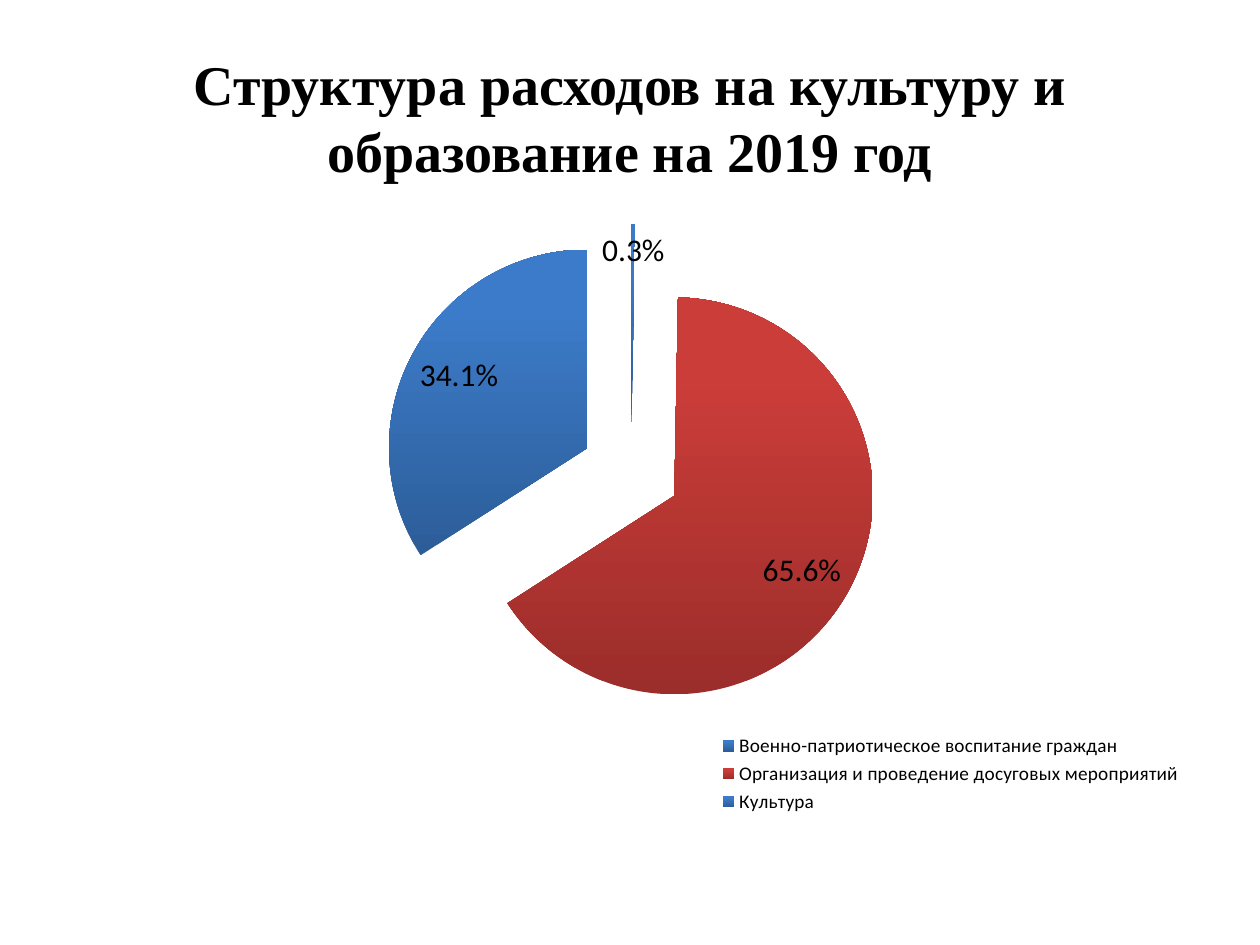
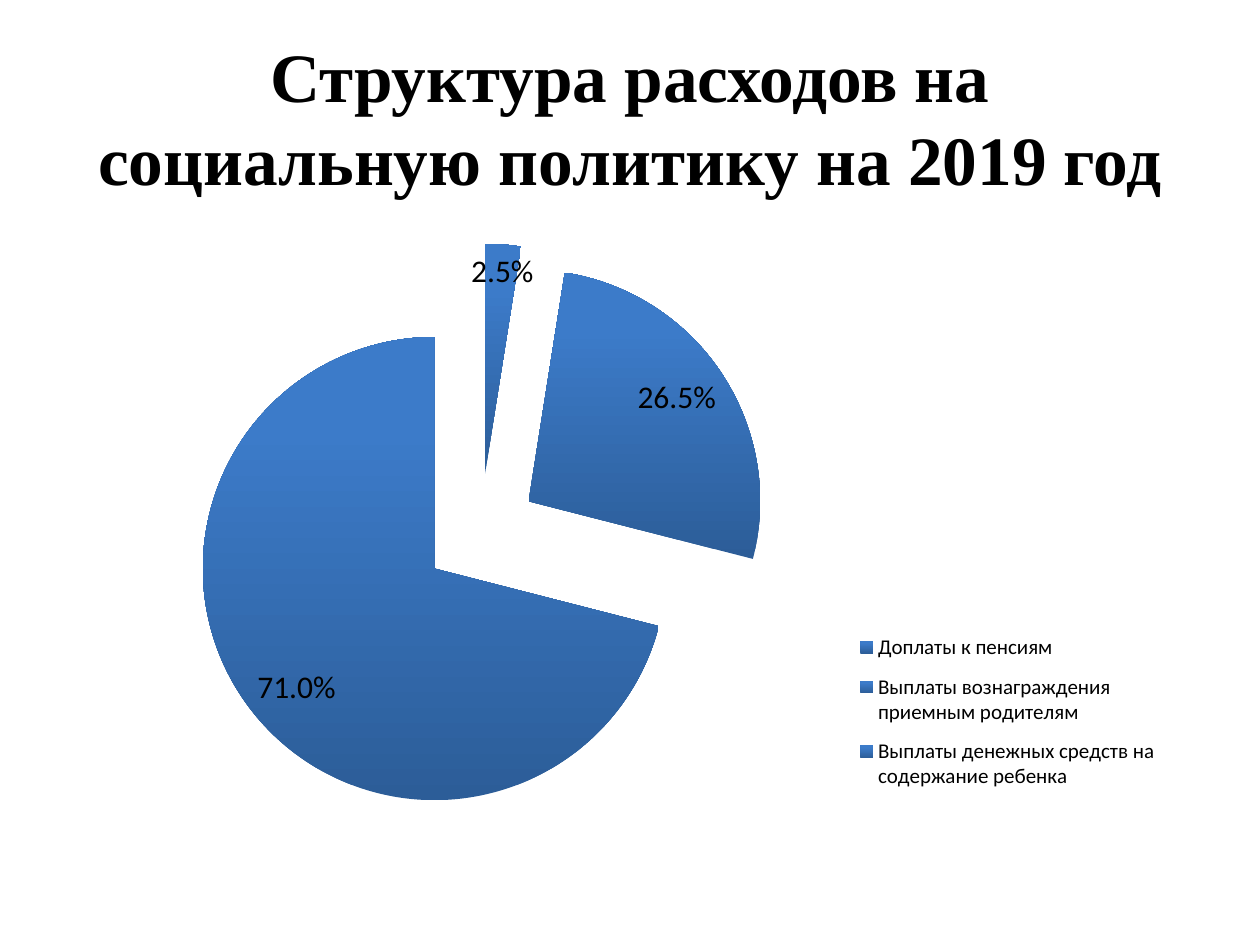
from lxml import etree
from pptx import Presentation
from pptx import util as u
from pptx.chart.data import CategoryChartData
from pptx.dml.color import RGBColor
from pptx.enum import chart as charts, text
from pptx.oxml import ns

# Content: title, its size, slices (label, percent, fill), legend and plot areas
BLUE = (RGBColor(0x2C, 0x5D, 0x98), RGBColor(0x3C, 0x7B, 0xC9))
RED = (RGBColor(0x9B, 0x2D, 0x2A), RGBColor(0xCB, 0x3D, 0x39))
BLACK = RGBColor(0, 0, 0)

PAGES = [
    dict(
        title="Структура расходов на культуру и образование на 2019 год",
        title_size=32,
        slices=[
            ("Военно-патриотическое воспитание граждан", 0.3, BLUE),
            ("Организация и проведение досуговых мероприятий", 65.6, RED),
            ("Культура", 34.1, BLUE),
        ],
        plot=(2, 4, 1132, 496),
        legend=(652, 510, 472, 88),
        legend_size=11,
    ),
    dict(
        title="Структура расходов на социальную политику на 2019 год",
        title_size=39.6,
        slices=[
            ("Доплаты к пенсиям", 2.5, BLUE),
            ("Выплаты вознаграждения приемным родителям", 26.5, BLUE),
            ("Выплаты денежных средств на содержание ребенка", 71, BLUE),
        ],
        plot=(20, 24, 794, 579),
        legend=(787, 400, 315, 184),
        legend_size=12,
    ),
]

# Shared layout, in px
PX_PER_INCH = 126
PAGE_SIZE = (1260, 945)
TITLE_BOX = (63, 38, 1134, 157)
CHART_BOX = (63, 220, 1134, 624)
EXPLOSION = 25


def px(length):
    return u.Emu(round(length * u.Inches(1) / PX_PER_INCH))


def apply(target, **values):
    for name, value in values.items():
        setattr(target, name, value)


def chart_element(parent, tag, value):
    return etree.SubElement(parent, ns.qn(f"c:{tag}"), val=str(value))


def manual_layout(box, inner=False):
    """Layout element for a box given in px from the chart's corner."""
    layout = etree.Element(ns.qn("c:layout"))
    manual = etree.SubElement(layout, ns.qn("c:manualLayout"))
    if inner:
        chart_element(manual, "layoutTarget", "inner")
    for tag in ("xMode", "yMode"):
        chart_element(manual, tag, "edge")
    for tag, length, full in zip("xywh", box, CHART_BOX[2:] * 2):
        chart_element(manual, tag, round(length / full, 3))
    return layout


def replace_layout(parent, layout, after=None):
    for old in parent.findall(ns.qn("c:layout")):
        parent.remove(old)
    if after is None:
        parent.insert(0, layout)
    else:
        parent.find(ns.qn(after)).addnext(layout)


def add_title(page, words, size):
    title = page.shapes.title
    apply(title, **dict(zip(("left", "top", "width", "height"), map(px, TITLE_BOX))))
    frame = title.text_frame
    apply(frame, text=words, word_wrap=True, auto_size=text.MSO_AUTO_SIZE.NONE,
          vertical_anchor=text.MSO_ANCHOR.MIDDLE)
    para = frame.paragraphs[0]
    para.alignment = text.PP_ALIGN.CENTER
    apply(para.runs[0].font, name="Times New Roman", size=u.Pt(size), bold=True)
    para.runs[0].font.color.rgb = BLACK


def add_pie(page, slices, plot_box, legend_box, legend_size):
    data = CategoryChartData()
    data.categories = [label for label, _, _ in slices]
    data.add_series("Series 1", [value for _, value, _ in slices])
    chart = page.shapes.add_chart(
        charts.XL_CHART_TYPE.PIE, *map(px, CHART_BOX), data).chart
    apply(chart, has_title=False, has_legend=True)
    apply(chart.font, name="Calibri", size=u.Pt(18))
    chart.font.color.rgb = BLACK

    # Exploded slices with a vertical gradient
    plot = chart.plots[0]
    plot.vary_by_categories = True
    series = plot.series[0]
    explosion = etree.Element(ns.qn("c:explosion"), val=str(EXPLOSION))
    series._element.find(ns.qn("c:tx")).addnext(explosion)
    for index, (_, _, colours) in enumerate(slices):
        fill = series.points[index].format.fill
        fill.gradient()
        fill.gradient_angle = 90
        for stop, colour, position in zip(fill.gradient_stops, colours, (0, 0.8)):
            stop.color.rgb = colour
            stop.position = position

    # Percent labels
    plot.has_data_labels = True
    apply(plot.data_labels, show_percentage=True, show_value=False,
          number_format="0.0%", number_format_is_linked=False,
          position=charts.XL_LABEL_POSITION.INSIDE_END)

    # Legend and plot area
    legend = chart.legend
    apply(legend, position=charts.XL_LEGEND_POSITION.RIGHT, include_in_layout=False)
    apply(legend.font, name="Calibri", size=u.Pt(legend_size))
    legend.font.color.rgb = BLACK
    replace_layout(legend._element, manual_layout(legend_box), "c:legendPos")
    area = chart._chartSpace.find(".//" + ns.qn("c:plotArea"))
    replace_layout(area, manual_layout(plot_box, inner=True))


def main():
    deck = Presentation()
    deck.slide_width, deck.slide_height = map(px, PAGE_SIZE)
    title_only = deck.slide_layouts[5]
    for content in PAGES:
        page = deck.slides.add_slide(title_only)
        add_title(page, content["title"], content["title_size"])
        add_pie(page, content["slices"], content["plot"],
                content["legend"], content["legend_size"])
    deck.save("out.pptx")


if __name__ == "__main__":
    main()
